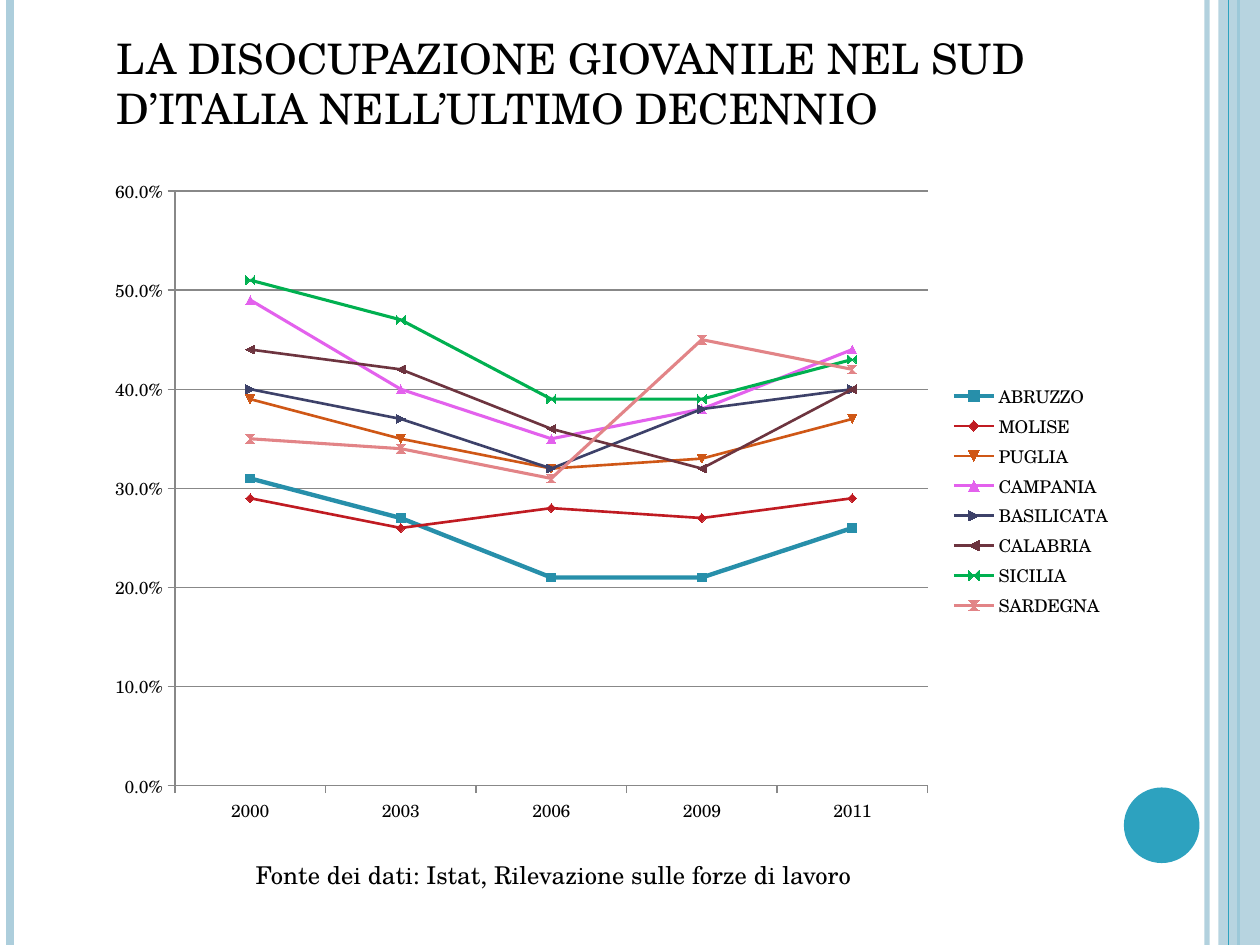
from lxml import etree
from pptx import Presentation
from pptx.chart.data import CategoryChartData
from pptx.dml.color import RGBColor
from pptx.enum.chart import XL_CHART_TYPE, XL_LEGEND_POSITION, XL_TICK_MARK
from pptx.enum.shapes import MSO_CONNECTOR, MSO_SHAPE
from pptx.enum.text import MSO_ANCHOR, MSO_AUTO_SIZE
from pptx.oxml.ns import qn
from pptx.util import Inches, Pt

FONT = "TeX Gyre Schola"
BLACK = RGBColor(0x00, 0x00, 0x00)
GRAY = RGBColor(0x88, 0x88, 0x88)
TEAL = RGBColor(0x2D, 0xA2, 0xBF)
PALE_BLUE = RGBColor(0xAD, 0xCE, 0xDC)
DARK_TEAL = RGBColor(0x27, 0x8F, 0xAA)
RED = RGBColor(0xC0, 0x1B, 0x22)
ORANGE = RGBColor(0xCF, 0x57, 0x16)
PINK = RGBColor(0xE3, 0x61, 0xED)
NAVY = RGBColor(0x3D, 0x41, 0x69)
MAROON = RGBColor(0x6D, 0x34, 0x3F)
GREEN = RGBColor(0x00, 0xB0, 0x50)
SALMON = RGBColor(0xE2, 0x84, 0x87)


def set_alpha(shape, percent):
    """Make the shape's solid colour partly opaque."""
    color = next(shape._element.spPr.iter(qn("a:srgbClr")))
    etree.SubElement(color, qn("a:alpha")).set("val", str(percent * 1000))


prs = Presentation()
prs.slide_width, prs.slide_height = Inches(10), Inches(7.5)
slide = prs.slides.add_slide(prs.slide_layouts[6])

# Side band and disc
for preset, left, top, width, height, color, alpha in [
    (MSO_SHAPE.RECTANGLE, 9.67, 0, 0.33, 7.5, PALE_BLUE, 87),
    (MSO_SHAPE.OVAL, 8.92, 6.25, 0.6, 0.6, TEAL, 100),
]:
    ornament = slide.shapes.add_shape(
        preset, Inches(left), Inches(top), Inches(width), Inches(height))
    ornament.shadow.inherit = False
    ornament.fill.solid()
    ornament.fill.fore_color.rgb = color
    ornament.line.fill.background()
    if alpha < 100:
        set_alpha(ornament, alpha)

# Vertical stripes; the one at 9.83 shows through the band
for x, color, weight, alpha in [
    (9.58, PALE_BLUE, 3, 93),
    (0.08, PALE_BLUE, 4.5, 100),
    (9.83, TEAL, 1.5, 100),
    (9.75, TEAL, 0.75, 100),
]:
    stripe = slide.shapes.add_connector(
        MSO_CONNECTOR.STRAIGHT, Inches(x), 0, Inches(x), Inches(7.5))
    stripe.line.color.rgb = color
    stripe.line.width = Pt(weight)
    etree.SubElement(stripe._element.spPr, qn("a:effectLst"))
    if alpha < 100:
        set_alpha(stripe, alpha)
    if x == 9.83:
        band = slide.shapes[0]._element
        band.addprevious(stripe._element)

for text, left, top, width, height, size, wrap in [
    ("LA DISOCUPAZIONE GIOVANILE NEL SUD D’ITALIA NELL’ULTIMO DECENNIO",
     0.83, 0.2, 8.43, 0.91, 24, True),
    ("Fonte dei dati: Istat, Rilevazione sulle forze di lavoro",
     1.93, 6.77, 4.98, 0.34, 14, False),
]:
    box = slide.shapes.add_textbox(Inches(left), Inches(top), Inches(width), Inches(height))
    frame = box.text_frame
    frame.word_wrap = wrap
    frame.auto_size = MSO_AUTO_SIZE.SHAPE_TO_FIT_TEXT
    frame.vertical_anchor = MSO_ANCHOR.MIDDLE
    frame.text = text
    font = frame.paragraphs[0].font
    font.name, font.size = FONT, Pt(size)
    font.color.rgb = BLACK

# Region, unemployment rate by year, line colour, line weight
regions = [
    ("ABRUZZO", (0.31, 0.27, 0.21, 0.21, 0.26), DARK_TEAL, 2.5),
    ("MOLISE", (0.29, 0.26, 0.28, 0.27, 0.29), RED, 1.5),
    ("PUGLIA", (0.39, 0.35, 0.32, 0.33, 0.37), ORANGE, 1.5),
    ("CAMPANIA", (0.49, 0.4, 0.35, 0.38, 0.44), PINK, 1.75),
    ("BASILICATA", (0.4, 0.37, 0.32, 0.38, 0.4), NAVY, 1.5),
    ("CALABRIA", (0.44, 0.42, 0.36, 0.32, 0.4), MAROON, 1.5),
    ("SICILIA", (0.51, 0.47, 0.39, 0.39, 0.43), GREEN, 1.75),
    ("SARDEGNA", (0.35, 0.34, 0.31, 0.45, 0.42), SALMON, 1.75),
]
rates = CategoryChartData(number_format="0.0%")
rates.categories = ["2000", "2003", "2006", "2009", "2011"]
for name, values, _, _ in regions:
    rates.add_series(name, values)

chart = slide.shapes.add_chart(
    XL_CHART_TYPE.LINE_MARKERS, Inches(0.75), Inches(1.31), Inches(8.17), Inches(5.33), rates).chart
chart.has_title = False
chart.font.name, chart.font.size = FONT, Pt(10)
chart.font.color.rgb = BLACK
chart.has_legend = True
chart.legend.position = XL_LEGEND_POSITION.RIGHT
chart.legend.include_in_layout = False

rate_axis = chart.value_axis
rate_axis.minimum_scale, rate_axis.maximum_scale, rate_axis.major_unit = 0, 0.6, 0.1
rate_axis.has_major_gridlines = True
rate_axis.tick_labels.number_format = "0.0%"
rate_axis.tick_labels.number_format_is_linked = False
for axis in (rate_axis, chart.category_axis):
    axis.major_tick_mark = XL_TICK_MARK.OUTSIDE
for part in (rate_axis, chart.category_axis, rate_axis.major_gridlines):
    part.format.line.color.rgb = GRAY
    part.format.line.width = Pt(0.75)

chart.plots[0].vary_by_categories = False
for series, (_, _, color, weight) in zip(chart.plots[0].series, regions):
    series.smooth = False
    series.format.line.color.rgb = color
    series.format.line.width = Pt(weight)
    series.marker.size = 5
    series.marker.format.fill.solid()
    series.marker.format.fill.fore_color.rgb = color
    series.marker.format.line.color.rgb = color

prs.save("out.pptx")
